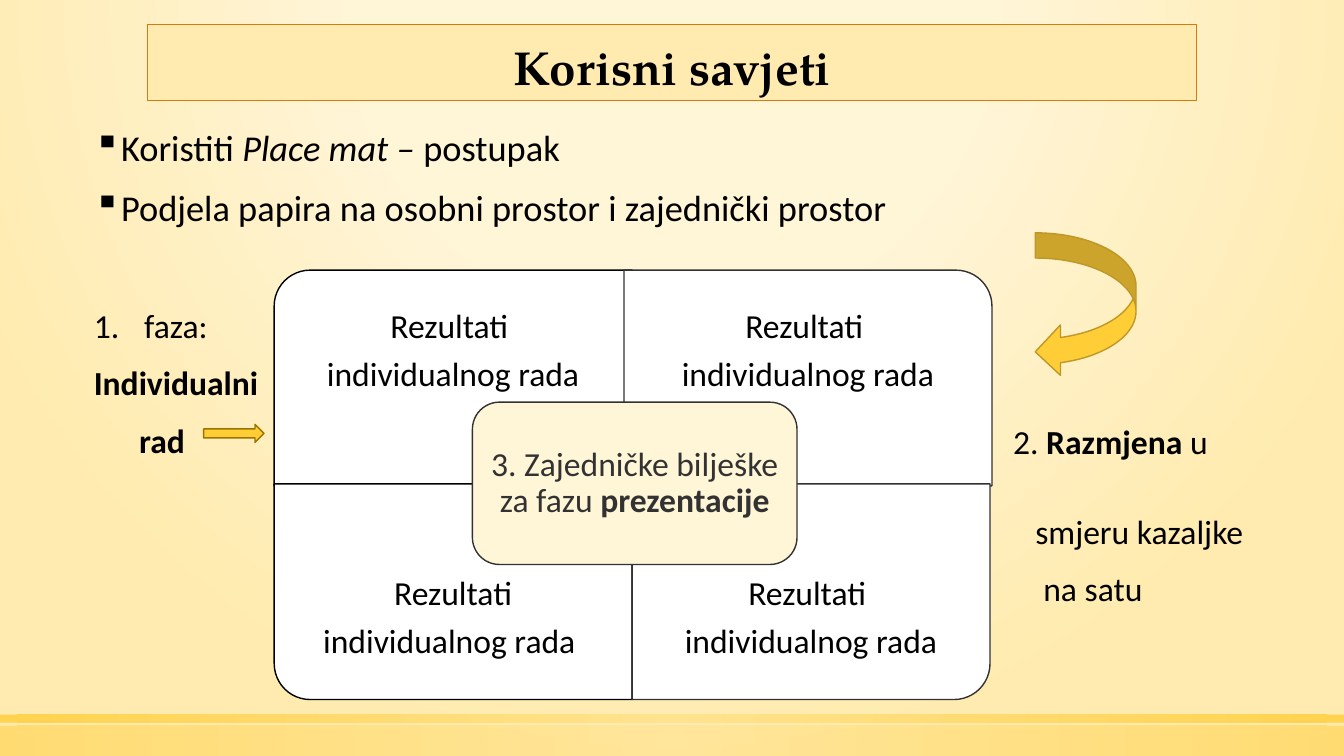
from dataclasses import dataclass

from lxml import etree
from pptx import Presentation
from pptx.dml.color import RGBColor
from pptx.enum.shapes import MSO_SHAPE
from pptx.enum.text import MSO_ANCHOR, PP_ALIGN
from pptx.oxml.ns import qn
from pptx.slide import Slide
from pptx.util import Inches, Pt

RECTANGLE = MSO_SHAPE.RECTANGLE
ROUNDED = MSO_SHAPE.ROUNDED_RECTANGLE
ONE_ROUND_CORNER = MSO_SHAPE.ROUND_1_RECTANGLE
CURVED_ARROW = MSO_SHAPE.CURVED_LEFT_ARROW
RIGHT_ARROW = MSO_SHAPE.RIGHT_ARROW
LEFT, CENTER = PP_ALIGN.LEFT, PP_ALIGN.CENTER
TOP, MIDDLE, BOTTOM = MSO_ANCHOR.TOP, MSO_ANCHOR.MIDDLE, MSO_ANCHOR.BOTTOM

BLACK = RGBColor(0x00, 0x00, 0x00)
CHARCOAL = RGBColor(0x32, 0x32, 0x32)
WHITE = RGBColor(0xFF, 0xFF, 0xFF)
CREAM = RGBColor(0xFF, 0xF5, 0xD7)
SAND = RGBColor(0xFF, 0xEB, 0xAF)
LEMON = RGBColor(0xFF, 0xE1, 0x86)
GOLD = RGBColor(0xFF, 0xCD, 0x36)
ORANGE = RGBColor(0xD6, 0x79, 0x0E)
DARK_GOLD = RGBColor(0xBD, 0x98, 0x28)
BROWN = RGBColor(0x9A, 0x74, 0x00)

BODY_FONT, TITLE_FONT = "Calibri", "TeX Gyre Pagella"
WIDTH, HEIGHT = Inches(13.333), Inches(7.5)
COLUMN, ROW = WIDTH / 100, HEIGHT / 100

MAT_LEFT, MAT_TOP = 20.4, 35.73
CELL_WIDTH, CELL_HEIGHT = 26.63, 28.53
ROW_PITCH = 28.27
CELL_TEXT_HEIGHT = 21.47


@dataclass(frozen=True)
class Box:
    """Place on the slide, in columns and rows of a 100 by 100 grid."""
    left: float
    top: float
    width: float
    height: float


@dataclass(frozen=True)
class Run:
    text: str
    bold: bool = False
    italic: bool = False


@dataclass(frozen=True)
class Line:
    """One paragraph; indent and hanging are in columns."""
    runs: tuple[Run, ...]
    indent: float = 0
    hanging: float = 0
    marker: str = ""
    before: float = 18


@dataclass(frozen=True)
class MatCell:
    column: int
    row: int
    rotation: int
    outline: RGBColor
    lines: tuple[str, str]
    overlap: float = 0


MAT_CELLS = (
    MatCell(0, 0, 270, BLACK, ("Rezultati ", "individualnog rada")),
    MatCell(1, 0, 0, CHARCOAL, ("Rezultati ", "individualnog rada"), overlap=0.6),
    MatCell(0, 1, 180, BLACK, ("Rezultati", "individualnog rada ")),
    MatCell(1, 1, 90, CHARCOAL, ("Rezultati ", "individualnog rada")),
)
BULLETS = (
    Line((Run("Koristiti "), Run("Place mat – ", italic=True), Run("postupak")), 1.88, 1.88, "▪"),
    Line((Run("Podjela papira na osobni prostor i zajednički prostor"),), 1.88, 1.88, "▪"),
)
FIRST_PHASE = (
    Line((Run("faza:"),), 3.75, 3.75, "1."),
    Line((Run("Individualni", bold=True),)),
    Line((Run("rad", bold=True),), 3.38),
)
SECOND_PHASE = (
    Line((Run("2. "), Run("Razmjena", bold=True), Run(" u"))),
    Line((Run("smjeru kazaljke"),), 1.65, before=41.4),
    Line((Run("na satu"),), 2.25),
)


def emu(box: Box) -> tuple[int, int, int, int]:
    return (round(box.left * COLUMN), round(box.top * ROW),
            round(box.width * COLUMN), round(box.height * ROW))


def set_radial_fill(element, stops, top: int, bottom: int) -> None:
    """Replace the first solid fill by a circular gradient of (place, colour, opacity) stops."""
    solid = element.find(".//" + qn("a:solidFill"))
    stop_xml = "".join(
        f'<a:gs pos="{place * 1000}"><a:srgbClr val="{colour}">'
        f'<a:alpha val="{opacity * 1000}"/></a:srgbClr></a:gs>'
        for place, colour, opacity in stops)
    gradient = etree.fromstring(
        '<a:gradFill xmlns:a="http://schemas.openxmlformats.org/drawingml/2006/main" rotWithShape="1">'
        f'<a:gsLst>{stop_xml}</a:gsLst><a:path path="circle">'
        f'<a:fillToRect l="50000" t="{top * 1000}" r="50000" b="{bottom * 1000}"/>'
        '</a:path></a:gradFill>')
    solid.getparent().replace(solid, gradient)


def add_block(slide: Slide, kind: MSO_SHAPE, box: Box, fill: RGBColor,
              outline: RGBColor | None = None, weight: float = 1, rotation: int = 0):
    """Add a shape that covers the box after its rotation."""
    left, top, width, height = emu(box)
    if rotation % 180:
        left, top = left + (width - height) // 2, top + (height - width) // 2
        width, height = height, width
    shape = slide.shapes.add_shape(kind, left, top, width, height)
    shape.rotation = rotation
    shape.shadow.inherit = False
    shape.fill.solid()
    shape.fill.fore_color.rgb = fill
    if outline is None:
        shape.line.fill.background()
    else:
        shape.line.color.rgb = outline
        shape.line.width = Pt(weight)
    return shape


def write_text(shape, lines: tuple[Line, ...], *, size: float = 24, font: str = BODY_FONT,
               color: RGBColor = BLACK, align: PP_ALIGN = LEFT, anchor: MSO_ANCHOR = TOP,
               spacing: float = 0.8, after: float = 0, inset: float = 0) -> None:
    frame = shape.text_frame
    frame.word_wrap = True
    frame.vertical_anchor = anchor
    frame.margin_left = frame.margin_right = Inches(inset)
    frame.margin_top = frame.margin_bottom = Inches(inset)
    for index, line in enumerate(lines):
        paragraph = frame.add_paragraph() if index else frame.paragraphs[0]
        paragraph.alignment = align
        paragraph.line_spacing = spacing
        paragraph.space_before, paragraph.space_after = Pt(line.before), Pt(after)
        properties = paragraph._p.get_or_add_pPr()
        properties.set("marL", str(round(line.indent * COLUMN)))
        properties.set("indent", str(round(-line.hanging * COLUMN)))
        if line.marker == "1.":
            etree.SubElement(properties, qn("a:buAutoNum"), type="arabicPeriod")
        elif line.marker:
            etree.SubElement(properties, qn("a:buChar"), char=line.marker)
        for part in line.runs:
            run = paragraph.add_run()
            run.text = part.text
            run.font.name, run.font.size = font, Pt(size)
            run.font.bold, run.font.italic = part.bold, part.italic
            run.font.color.rgb = color


def add_mat_cell(slide: Slide, cell: MatCell) -> None:
    box = Box(MAT_LEFT + cell.column * CELL_WIDTH - cell.overlap, MAT_TOP + cell.row * ROW_PITCH,
              CELL_WIDTH + cell.overlap * 1.25, CELL_HEIGHT)
    add_block(slide, ONE_ROUND_CORNER, box, WHITE, cell.outline, rotation=cell.rotation)
    text_top = box.top + cell.row * (CELL_HEIGHT - CELL_TEXT_HEIGHT)
    label = slide.shapes.add_textbox(*emu(Box(box.left, text_top, box.width, CELL_TEXT_HEIGHT)))
    write_text(label, tuple(Line((Run(text),), before=0) for text in cell.lines),
               align=CENTER, anchor=MIDDLE, spacing=0.9, after=8.4, inset=0.19)


def main() -> None:
    presentation = Presentation()
    presentation.slide_width, presentation.slide_height = WIDTH, HEIGHT
    slide = presentation.slides.add_slide(presentation.slide_layouts[6])
    slide.background.fill.solid()
    set_radial_fill(slide.element, ((0, CREAM, 59), (40, CREAM, 66), (100, SAND, 100)), -80, 180)

    for box, opacity in ((Box(0, 96, 100, 4), 50), (Box(0, 94.53, 100, 1.07), 80)):
        band = add_block(slide, RECTANGLE, box, GOLD)
        set_radial_fill(band.element, ((0, LEMON, opacity), (100, GOLD, opacity)), 50, 50)

    title = add_block(slide, RECTANGLE, Box(11, 3.2, 78, 10.13), SAND, ORANGE, 0.75)
    write_text(title, (Line((Run("Korisni savjeti", bold=True),), before=0),), size=34,
               font=TITLE_FONT, align=CENTER, anchor=BOTTOM, spacing=0.9, inset=0.05)

    for lines, box, size in ((BULLETS, Box(6.98, 17.6, 80, 13), 26),
                             (FIRST_PHASE, Box(6.98, 41.33, 13.1, 20), 24),
                             (SECOND_PHASE, Box(75.38, 56.67, 20, 24), 24)):
        write_text(slide.shapes.add_textbox(*emu(box)), lines, size=size)

    for cell in MAT_CELLS:
        add_mat_cell(slide, cell)
    shared = add_block(slide, ROUNDED, Box(35.15, 53.2, 24.15, 21.47), CREAM, CHARCOAL)
    notes = Line((Run("3. Zajedničke bilješke za fazu "), Run("prezentacije", bold=True)), before=0)
    write_text(shared, (notes,), color=CHARCOAL, align=CENTER, anchor=MIDDLE,
               spacing=0.9, inset=0.09)

    add_block(slide, CURVED_ARROW, Box(77.03, 30.8, 7.5, 19.07), GOLD, DARK_GOLD)
    add_block(slide, RIGHT_ARROW, Box(15.15, 56.13, 4.5, 2.4), GOLD, BROWN)
    presentation.save("out.pptx")


if __name__ == "__main__":
    main()
